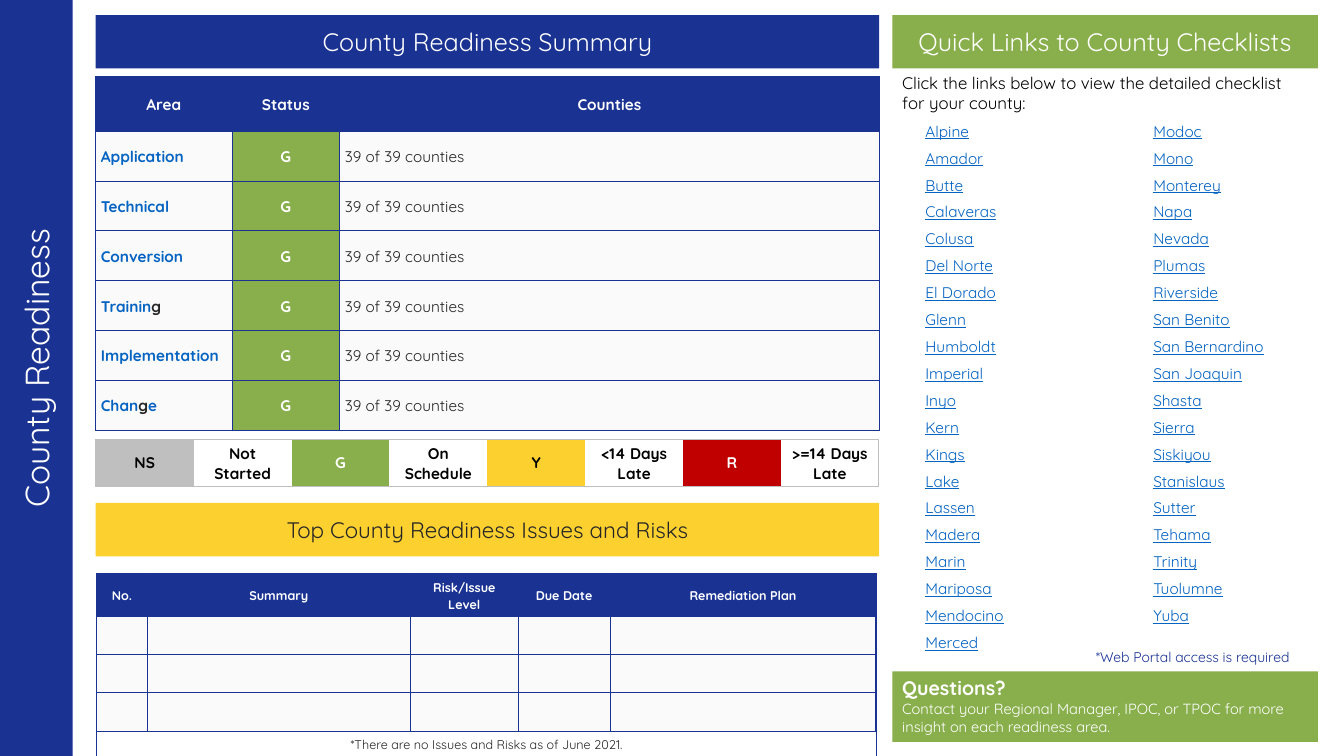
from dataclasses import dataclass

from lxml import etree
from pptx import Presentation
from pptx.dml.color import RGBColor
from pptx.enum.shapes import MSO_SHAPE
from pptx.enum.text import MSO_ANCHOR, MSO_AUTO_SIZE, PP_ALIGN
from pptx.oxml.ns import qn
from pptx.util import Inches, Pt

RECTANGLE = MSO_SHAPE.RECTANGLE
TOP, MIDDLE = MSO_ANCHOR.TOP, MSO_ANCHOR.MIDDLE
LEFT, CENTER = PP_ALIGN.LEFT, PP_ALIGN.CENTER
GROW = MSO_AUTO_SIZE.SHAPE_TO_FIT_TEXT
TITLE_ONLY = 5


@dataclass(frozen=True)
class Theme:
    font: str = "Quicksand"
    navy: str = "1A3292"
    green: str = "88AF4B"
    yellow: str = "FCD02F"
    red: str = "C00000"
    gray: str = "BFBFBF"
    pale: str = "FAFAFA"
    white: str = "FFFFFF"
    black: str = "000000"
    ink: str = "262626"
    link: str = "0563C1"
    title: float = 24
    banner: float = 18
    subbanner: float = 16
    heading: float = 14
    intro: float = 12
    body: float = 11
    contact: float = 10.5
    note: float = 10
    small: float = 9


THEME = Theme()
SLIDE = (13.33, 7.5)

# Grid: columns are (left, width), rows are (top, height), in inches
COLUMNS = {
    "rail": (0, 0.72), "title": (-1.21, 3.13), "main": (0.95, 7.77),
    "issues": (0.96, 7.73), "side": (8.85, 4.22), "links 1": (9.08, 1.73),
    "links 2": (11.34, 1.73), "note": (10.77, 2.3),
}
ROWS = {
    "full": (0, 7.5), "title": (3.32, 0.5), "banner": (0.15, 0.53),
    "summary": (0.76, 3.51), "legend": (4.36, 0.47), "subbanner": (4.99, 0.53),
    "issues": (5.69, 1.68), "intro": (0.67, 0.5), "links": (1.16, 5.4),
    "note": (6.38, 0.28), "questions": (6.66, 0.7),
}

AREAS = [
    [("Application", True)], [("Technical", True)], [("Conversion", True)],
    [("Trainin", True), ("g", False)], [("Implementation", True)],
    [("Chan", True), ("g", False), ("e", True)],
]
LEGEND = [
    ("NS", THEME.gray, THEME.black), ("Not Started", None, THEME.black),
    ("G", THEME.green, THEME.white), ("On Schedule", None, THEME.black),
    ("Y", THEME.yellow, THEME.black), ("<14 Days Late", None, THEME.black),
    ("R", THEME.red, THEME.white), (">=14 Days Late", None, THEME.black),
]
ISSUE_HEADERS = ["No.", "Summary", "Risk/Issue Level", "Due Date", "Remediation Plan"]
COUNTIES = {
    "links 1": ["Alpine", "Amador", "Butte", "Calaveras", "Colusa", "Del Norte",
                "El Dorado", "Glenn", "Humboldt", "Imperial", "Inyo", "Kern",
                "Kings", "Lake", "Lassen", "Madera", "Marin", "Mariposa",
                "Mendocino", "Merced"],
    "links 2": ["Modoc", "Mono", "Monterey", "Napa", "Nevada", "Plumas",
                "Riverside", "San Benito", "San Bernardino", "San Joaquin",
                "Shasta", "Sierra", "Siskiyou", "Stanislaus", "Sutter", "Tehama",
                "Trinity", "Tuolumne", "Yuba"],
}


def place(column, row):
    (left, width), (top, height) = COLUMNS[column], ROWS[row]
    return [Inches(value) for value in (left, top, width, height)]


def apply(target, values):
    for name, value in values.items():
        setattr(target, name, value)


def span(text, size, color, bold=False, underline=False):
    return text, color, {"name": THEME.font, "size": Pt(size),
                         "bold": bold, "underline": underline}


def write(frame, paragraphs, **para_format):
    """Fill a text frame; each paragraph is a list of spans."""
    for index, spans in enumerate(paragraphs):
        para = frame.paragraphs[0] if index == 0 else frame.add_paragraph()
        apply(para, para_format)
        for text, color, font in spans:
            run = para.add_run()
            run.text = text
            apply(run.font, font)
            run.font.color.rgb = RGBColor.from_string(color)


def add_block(page, column, row, color, paragraphs=(), anchor=MIDDLE, align=CENTER):
    block = page.shapes.add_shape(RECTANGLE, *place(column, row))
    block.shadow.inherit = False
    block.fill.solid()
    block.fill.fore_color.rgb = RGBColor.from_string(color)
    block.line.fill.background()
    apply(block.text_frame, {"word_wrap": True, "vertical_anchor": anchor})
    write(block.text_frame, paragraphs, alignment=align)


def add_text(page, column, row, paragraphs, **para_format):
    box = page.shapes.add_textbox(*place(column, row))
    apply(box.text_frame, {"word_wrap": True, "auto_size": GROW})
    write(box.text_frame, paragraphs, **para_format)


def add_grid(page, column, row, widths, heights, has_header=True):
    frame = page.shapes.add_table(len(heights), len(widths), *place(column, row))
    table = frame.table
    apply(table, {"first_row": has_header, "horz_banding": False})
    for part, width in zip(table.columns, widths):
        part.width = Inches(width)
    for part, height in zip(table.rows, heights):
        part.height = Inches(height)
    return table


def set_borders(cell, color, sides):
    """Draw the listed sides and clear the others; sides maps L, R, T, B to points."""
    properties = cell._tc.get_or_add_tcPr()
    for side in "LRTB":
        line = etree.SubElement(properties, qn("a:ln" + side))
        if side in sides:
            line.set("w", str(int(Pt(sides[side]))))
            fill = etree.SubElement(line, qn("a:solidFill"))
            etree.SubElement(fill, qn("a:srgbClr")).set("val", color)
        else:
            etree.SubElement(line, qn("a:noFill"))


def ruled(row, column, rows, columns):
    """Outer edges are 1 pt, inner edges 0.5 pt."""
    outer = {"L": column == 0, "R": column == columns - 1,
             "T": row == 0, "B": row == rows - 1}
    return {side: 1 if edge else 0.5 for side, edge in outer.items()}


def fill_cell(cell, fill, spans, border, sides, align=CENTER, margins=(0.05, 0.05), spacing=1.07):
    set_borders(cell, border, sides)
    if fill:
        cell.fill.solid()
        cell.fill.fore_color.rgb = RGBColor.from_string(fill)
    else:
        cell.fill.background()
    across, down = (Inches(margin) for margin in margins)
    apply(cell, {"vertical_anchor": MIDDLE, "margin_left": across, "margin_right": across,
                 "margin_top": down, "margin_bottom": down})
    write(cell.text_frame, [spans], alignment=align, line_spacing=spacing)


def add_summary(page):
    widths, heights = [1.35, 1.07, 5.35], [0.54] + [0.495] * len(AREAS)
    table = add_grid(page, "main", "summary", widths, heights)
    header = [(THEME.navy, [span(text, THEME.body, THEME.white, True)], CENTER)
              for text in ("Area", "Status", "Counties")]
    content = [header]
    for parts in AREAS:
        area = [span(text, THEME.body, THEME.link if linked else THEME.ink, True)
                for text, linked in parts]
        content.append([
            (THEME.pale, area, LEFT),
            (THEME.green, [span("G", THEME.body, THEME.white, True)], CENTER),
            (THEME.pale, [span("39 of 39 counties", THEME.body, THEME.ink)], LEFT),
        ])
    for row, cells in enumerate(content):
        for column, (fill, spans, align) in enumerate(cells):
            sides = ruled(row, column, len(heights), len(widths))
            fill_cell(table.cell(row, column), fill, spans, THEME.navy, sides, align)


def add_legend(page):
    count = len(LEGEND)
    table = add_grid(page, "main", "legend", [COLUMNS["main"][1] / count] * count,
                     [ROWS["legend"][1]], has_header=False)
    for column, (text, fill, color) in enumerate(LEGEND):
        sides = {side: width for side, width in ruled(0, column, 1, count).items() if width == 1}
        fill_cell(table.cell(0, column), fill, [span(text, THEME.body, color, True)],
                  THEME.gray, sides, margins=(0.1, 0.05), spacing=1.0)


def add_issues(page):
    widths, heights = [0.5, 2.61, 1.07, 0.91, 2.64], [0.27, 0.38, 0.38, 0.38, 0.27]
    table = add_grid(page, "issues", "issues", widths, heights)
    last = len(heights) - 1
    table.cell(last, 0).merge(table.cell(last, len(widths) - 1))
    note = span("*There are no Issues and Risks as of June 2021.", THEME.small, THEME.ink)
    for row in range(len(heights)):
        for column, header in enumerate(ISSUE_HEADERS):
            fill, spans, margins = THEME.pale, [], (0.05, 0.01)
            if row == 0:
                fill, margins = THEME.navy, (0.05, 0.05)
                spans = [span(header, THEME.small, THEME.white, True)]
            elif row == last:
                fill, spans = None, [note] if column == 0 else []
            sides = ruled(row, column, len(heights), len(widths))
            fill_cell(table.cell(row, column), fill, spans, THEME.navy, sides, margins=margins)


def add_title(page):
    title = page.shapes.title
    apply(title, dict(zip(("left", "top", "width", "height"), place("title", "title"))))
    title.rotation = 270
    apply(title.text_frame, {"word_wrap": False, "auto_size": GROW, "vertical_anchor": TOP})
    write(title.text_frame, [[span("County Readiness", THEME.title, THEME.white)]],
          alignment=LEFT, line_spacing=1.0)
    page.shapes._spTree.append(title._element)


def main():
    deck = Presentation()
    deck.slide_width, deck.slide_height = (Inches(length) for length in SLIDE)
    page = deck.slides.add_slide(deck.slide_layouts[TITLE_ONLY])

    # Side rail with the title on top of it
    add_block(page, "rail", "full", THEME.navy)
    add_title(page)

    # Main column
    add_block(page, "main", "banner", THEME.navy,
              [[span("County Readiness Summary", THEME.banner, THEME.white)]])
    add_summary(page)
    add_legend(page)
    add_block(page, "main", "subbanner", THEME.yellow,
              [[span("Top County Readiness Issues and Risks", THEME.subbanner, THEME.ink)]])
    add_issues(page)

    # Checklist column
    add_block(page, "side", "banner", THEME.green,
              [[span("Quick Links to County Checklists", THEME.banner, THEME.white)]])
    add_text(page, "side", "intro", [[span(
        "Click the links below to view the detailed checklist for your county:",
        THEME.intro, THEME.black)]])
    for column, names in COUNTIES.items():
        add_text(page, column, "links",
                 [[span(name, THEME.body, THEME.link, underline=True)] for name in names],
                 space_before=Pt(3), space_after=Pt(3))
    add_text(page, "note", "note",
             [[span("*Web Portal access is required", THEME.note, THEME.navy)]])
    add_block(page, "side", "questions", THEME.green, [
        [span("Questions?", THEME.heading, THEME.white, True)],
        [span("Contact your Regional Manager, IPOC, or TPOC for more insight on each "
              "readiness area.", THEME.contact, THEME.white)],
    ], TOP, LEFT)

    deck.save("out.pptx")


if __name__ == "__main__":
    main()
